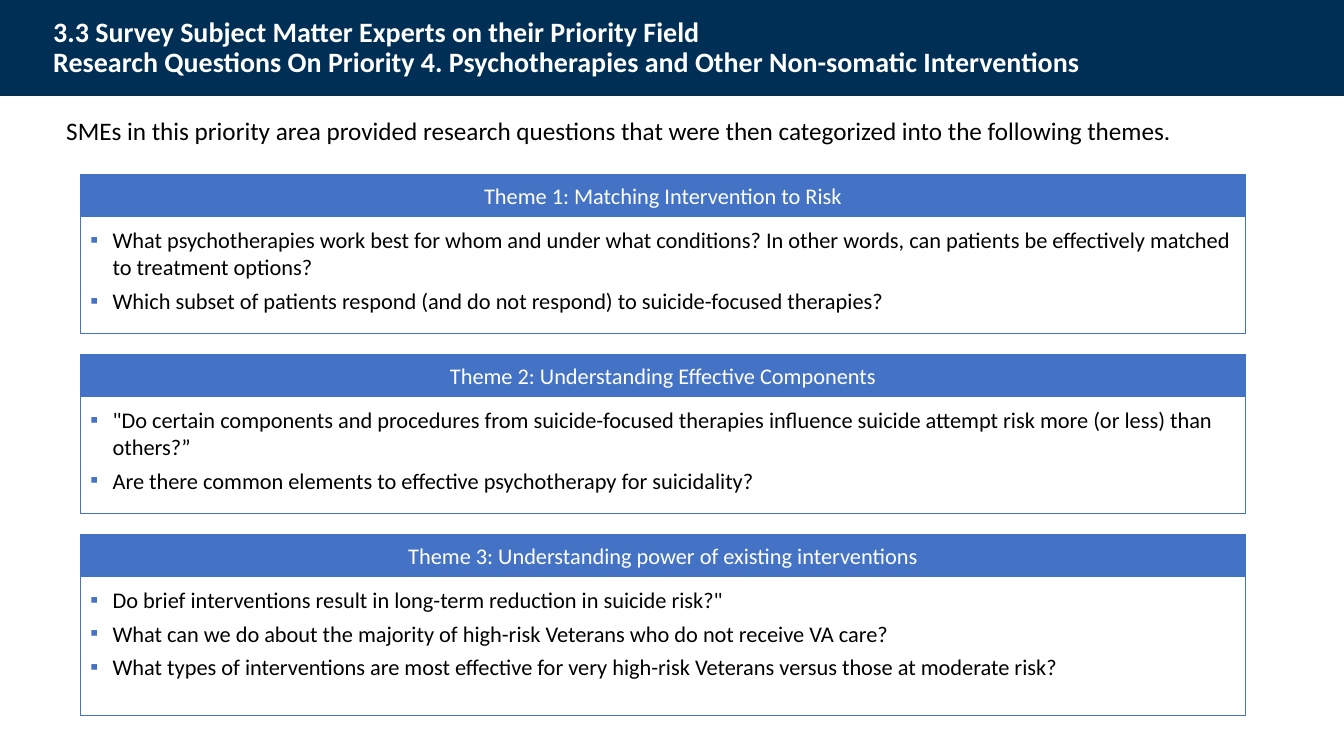
from lxml.etree import SubElement
from pptx import Presentation
from pptx.dml.color import RGBColor
from pptx.enum.shapes import MSO_SHAPE as Shape
from pptx.enum.text import MSO_ANCHOR as Anchor, PP_ALIGN as Align
from pptx.oxml.ns import qn
from pptx.util import Cm, Pt

TITLE = ("3.3 Survey Subject Matter Experts on their Priority Field\n"
         "Research Questions On Priority 4. Psychotherapies and Other Non-somatic Interventions")
INTRO = ("SMEs in this priority area provided research questions that were then "
         "categorized into the following themes.")
# heading, height of the question box in cm, questions
THEMES = [
    ("Theme 1: Matching Intervention to Risk", 2.95, [
        "What psychotherapies work best for whom and under what conditions? In other words, "
        "can patients be effectively matched to treatment options?",
        "Which subset of patients respond (and do not respond) to suicide-focused therapies?",
    ]),
    ("Theme 2: Understanding Effective Components", 2.95, [
        "\"Do certain components and procedures from suicide-focused therapies influence "
        "suicide attempt risk more (or less) than others?”",
        "Are there common elements to effective psychotherapy for suicidality?",
    ]),
    ("Theme 3: Understanding power of existing interventions", 3.5, [
        "Do brief interventions result in long-term reduction in suicide risk?\"",
        "What can we do about the majority of high-risk Veterans who do not receive VA care?",
        "What types of interventions are most effective for very high-risk Veterans versus "
        "those at moderate risk?",
    ]),
]

THEME = {
    "navy": "002F56", "blue": "4472C4", "white": "FFFFFF", "black": "000000",
    "font": "Calibri", "title": 20, "intro": 18, "body": 16, "question_gap": 4.8,
}
SLIDE_WIDTH, SLIDE_HEIGHT = 33.87, 19.05
PANEL_LEFT, PANEL_WIDTH = 2.03, 29.36
PANEL_TOP, PANEL_PITCH, HEADING_HEIGHT = 4.4, 4.53, 1.06
INDENT = Cm(0.56)


def color(name):
    return RGBColor.from_string(THEME[name])


def set_format(target, values):
    for name, value in values.items():
        setattr(target, name, value)


def add_box(slide, left, top, width, height, fill, line=None):
    box = slide.shapes.add_shape(Shape.RECTANGLE, Cm(left), Cm(top), Cm(width), Cm(height))
    box.shadow.inherit = False
    box.fill.solid()
    box.fill.fore_color.rgb = color(fill)
    if line:
        box.line.color.rgb = color(line)
        box.line.width = Pt(0.75)
    else:
        box.line.fill.background()
    return box


def add_bullet(paragraph):
    properties = paragraph._p.get_or_add_pPr()
    properties.set("marL", str(INDENT))
    properties.set("indent", str(-INDENT))
    bullet_color = SubElement(properties, qn("a:buClr"))
    SubElement(bullet_color, qn("a:srgbClr"), val=THEME["blue"])
    SubElement(properties, qn("a:buFont"), typeface=THEME["font"])
    SubElement(properties, qn("a:buChar"), char="▪")


def write(shape, texts, size, ink, anchor=Anchor.TOP, align=Align.LEFT,
          inset=0.13, spacing=None, bold=False, bullets=False):
    frame = shape.text_frame
    set_format(frame, {
        "word_wrap": True, "vertical_anchor": anchor,
        "margin_left": Cm(0.25), "margin_right": Cm(0.25),
        "margin_top": Cm(inset), "margin_bottom": Cm(inset),
    })
    for index, text in enumerate(texts):
        paragraph = frame.add_paragraph() if index else frame.paragraphs[0]
        paragraph.text = text
        paragraph.alignment = align
        if spacing:
            paragraph.line_spacing = spacing
        if bullets:
            if index:
                paragraph.space_before = Pt(THEME["question_gap"])
            add_bullet(paragraph)
        set_format(paragraph.font, {"name": THEME["font"], "size": Pt(THEME[size]), "bold": bold})
        paragraph.font.color.rgb = color(ink)


def add_text(slide, left, top, width, height, text, size, ink, **options):
    box = slide.shapes.add_textbox(Cm(left), Cm(top), Cm(width), Cm(height))
    write(box, [text], size, ink, **options)


def add_theme_panel(slide, top, heading, body_height, questions):
    body = add_box(slide, PANEL_LEFT, top + HEADING_HEIGHT, PANEL_WIDTH, body_height,
                   "white", "blue")
    write(body, questions, "body", "black", inset=0.25, bullets=True)
    header = add_box(slide, PANEL_LEFT, top, PANEL_WIDTH, HEADING_HEIGHT, "blue", "blue")
    write(header, [heading], "body", "white", anchor=Anchor.MIDDLE, align=Align.CENTER)


def main():
    presentation = Presentation()
    presentation.slide_width, presentation.slide_height = Cm(SLIDE_WIDTH), Cm(SLIDE_HEIGHT)
    slide = presentation.slides.add_slide(presentation.slide_layouts[6])
    add_box(slide, 0, 0, SLIDE_WIDTH, 2.42, "navy")
    add_text(slide, 1.09, 0.28, 30.33, 1.88, TITLE, "title", "white",
             anchor=Anchor.MIDDLE, spacing=0.9, bold=True)
    for index, (heading, body_height, questions) in enumerate(THEMES):
        add_theme_panel(slide, PANEL_TOP + index * PANEL_PITCH, heading, body_height, questions)
    add_text(slide, 1.42, 2.77, 31.01, 1.02, INTRO, "intro", "black")
    presentation.save("out.pptx")


if __name__ == "__main__":
    main()
